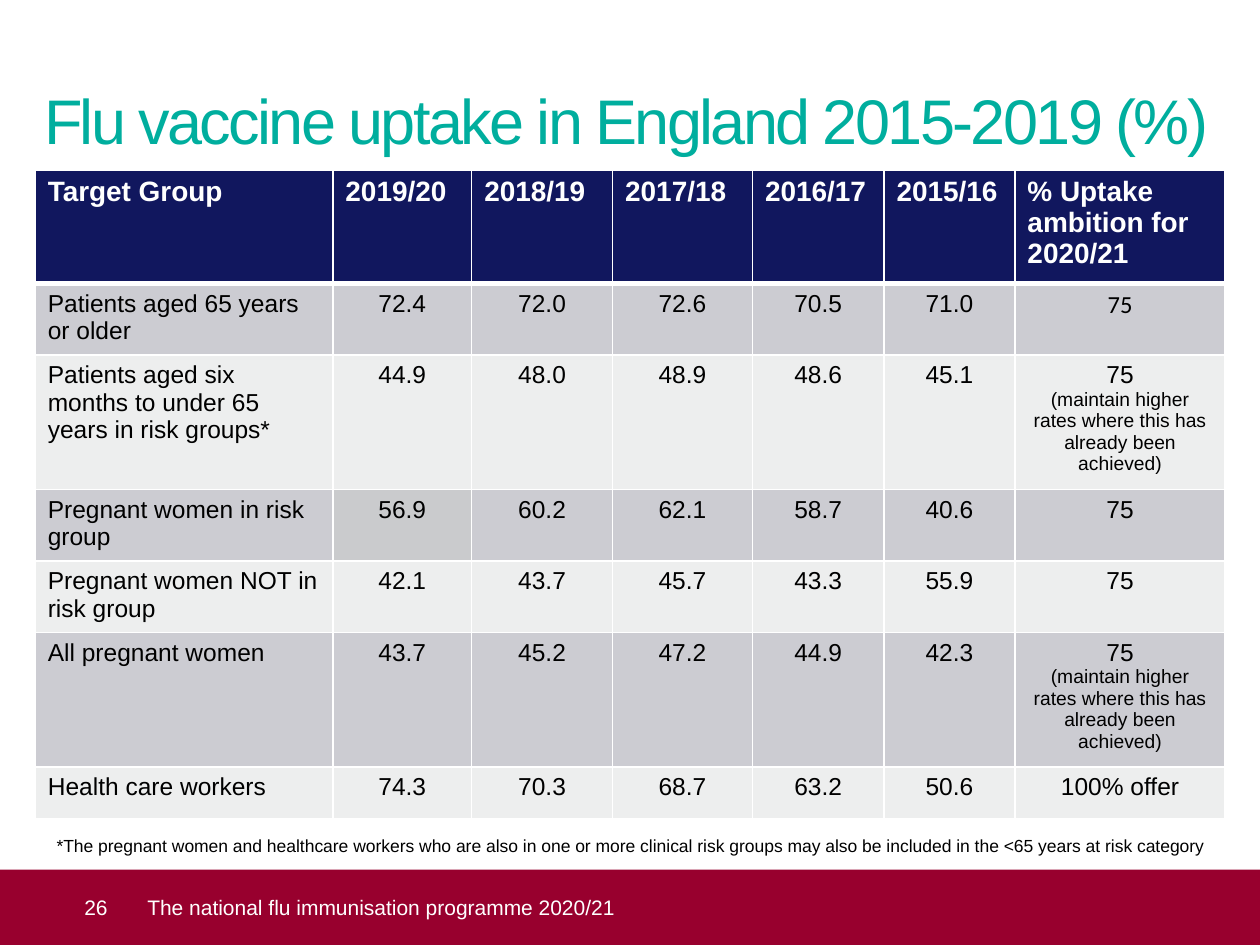
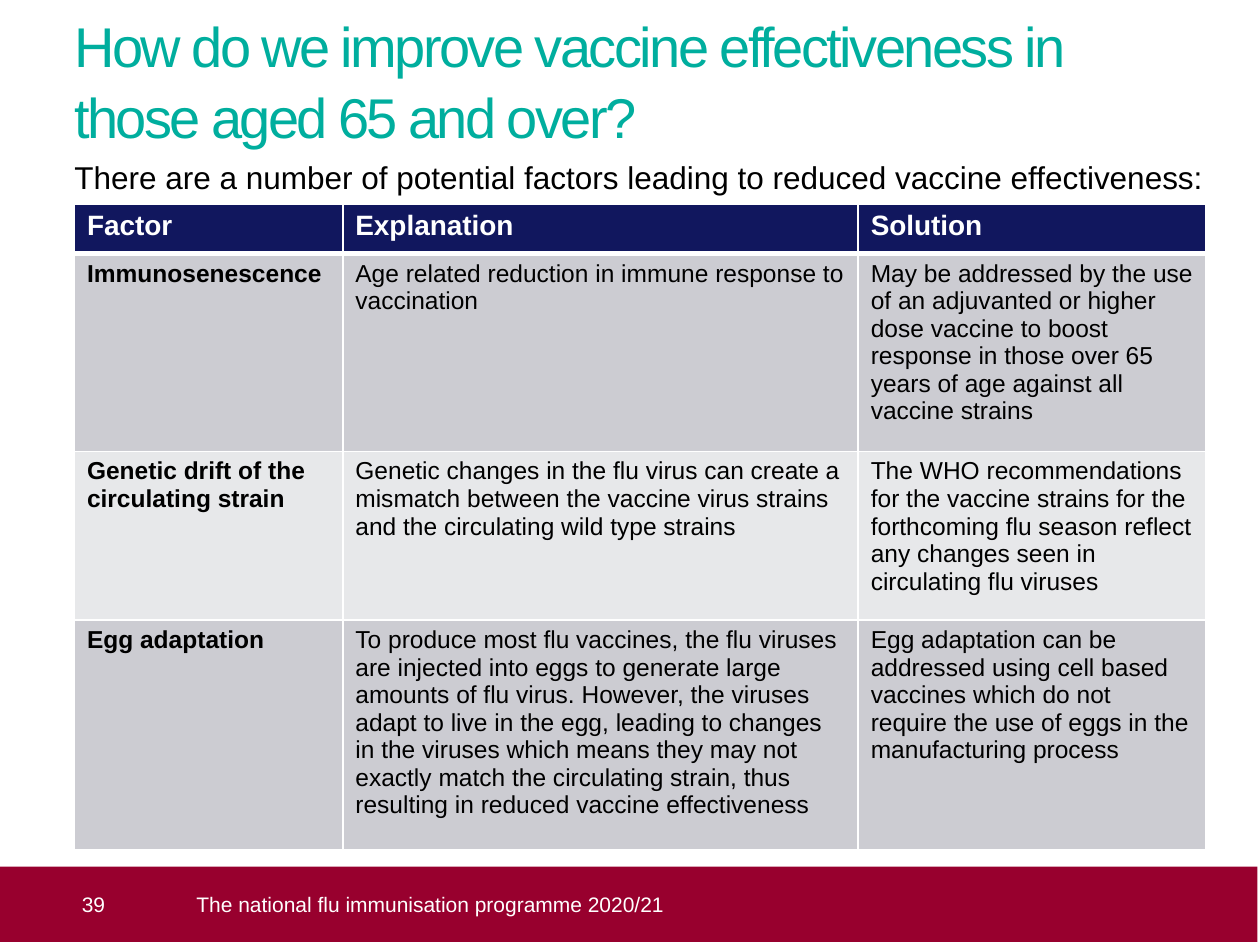
from lxml.etree import SubElement
from pptx import Presentation
from pptx.dml.color import RGBColor
from pptx.enum.shapes import MSO_SHAPE
from pptx.enum.text import MSO_ANCHOR, PP_ALIGN
from pptx.oxml.ns import qn
from pptx.util import Cm, Pt

COLOURS = {
    "teal": "00AE9E",
    "navy": "11175E",
    "crimson": "98002E",
    "grey": "CCCCD2",
    "cool": "CACBCD",
    "pale": "EDEEEE",
    "mist": "E7E8EA",
    "white": "FFFFFF",
    "black": "000000",
}
SLIDE_WIDTH = 25.4
PROGRAMME = "The national flu immunisation programme 2020/21"
FOOTER_FORMAT = {"size": Pt(12), "colour": "white"}
HEADER_FORMAT = {"size": Pt(16), "colour": "white", "bold": True}
CELL_FORMAT = {"size": Pt(14)}
NOTE_FORMAT = {"size": Pt(11)}

MAINTAIN = "75\n(maintain higher rates where this has already been achieved)"
UPTAKE_ROWS = [
    ["Target Group", "2019/20", "2018/19", "2017/18", "2016/17", "2015/16",
     "% Uptake ambition for 2020/21"],
    ["Patients aged 65 years or older",
     "72.4", "72.0", "72.6", "70.5", "71.0", "75"],
    ["Patients aged six months to under 65 years in risk groups*",
     "44.9", "48.0", "48.9", "48.6", "45.1", MAINTAIN],
    ["Pregnant women in risk group",
     "56.9", "60.2", "62.1", "58.7", "40.6", "75"],
    ["Pregnant women NOT in risk group",
     "42.1", "43.7", "45.7", "43.3", "55.9", "75"],
    ["All pregnant women",
     "43.7", "45.2", "47.2", "44.9", "42.3", MAINTAIN],
    ["Health care workers",
     "74.3", "70.3", "68.7", "63.2", "50.6", "100% offer"],
]
FACTOR_ROWS = [
    ["Factor", "Explanation", "Solution"],
    ["Immunosenescence",
     "Age related reduction in immune response to vaccination",
     "May be addressed by the use of an adjuvanted or higher dose vaccine to "
     "boost response in those over 65 years of age against all vaccine strains"],
    ["Genetic drift of the circulating strain",
     "Genetic changes in the flu virus can create a mismatch between the "
     "vaccine virus strains and the circulating wild type strains",
     "The WHO recommendations for the vaccine strains for the forthcoming flu "
     "season reflect any changes seen in circulating flu viruses"],
    ["Egg adaptation",
     "To produce most flu vaccines, the flu viruses are injected into eggs to "
     "generate large amounts of flu virus. However, the viruses adapt to live "
     "in the egg, leading to changes in the viruses which means they may not "
     "exactly match the circulating strain, thus resulting in reduced vaccine "
     "effectiveness",
     "Egg adaptation can be addressed using cell based vaccines which do not "
     "require the use of eggs in the manufacturing process"],
]


def colour_of(name):
    return RGBColor.from_string(COLOURS[name])


def add_span(para, text, colour="black", **values):
    """Add one run; the values are font attributes."""
    span = para.add_run()
    span.text = text
    for name, value in {"name": "Arial", "bold": False, **values}.items():
        setattr(span.font, name, value)
    span.font.color.rgb = colour_of(colour)
    return span


def set_frame(frame, margins, anchor):
    values = dict(zip(
        ("margin_left", "margin_top", "margin_right", "margin_bottom"),
        map(Cm, margins)))
    values.update(word_wrap=True, vertical_anchor=anchor)
    for name, value in values.items():
        setattr(frame, name, value)


def add_text(page, place, text, margins=(0, 0, 0, 0), anchor=MSO_ANCHOR.TOP,
             spacing=None, **values):
    box = page.shapes.add_textbox(*map(Cm, place))
    set_frame(box.text_frame, margins, anchor)
    para = box.text_frame.paragraphs[0]
    para.line_spacing = spacing
    return add_span(para, text, **values)


def add_title(page, place, text, size):
    span = add_text(page, place, text, spacing=1.05, size=Pt(size), colour="teal")
    span.font._element.set("spc", "-150")


def add_footer(page, number, left, top, text_left):
    # Band with the page number
    height = 1.52
    band = page.shapes.add_shape(
        MSO_SHAPE.RECTANGLE, Cm(left), Cm(top), Cm(SLIDE_WIDTH), Cm(height))
    band.shadow.inherit = False
    band.fill.solid()
    band.fill.fore_color.rgb = colour_of("crimson")
    band.line.fill.background()
    set_frame(band.text_frame, (1.7, 0, 0.25, 0), MSO_ANCHOR.MIDDLE)
    para = band.text_frame.paragraphs[0]
    para.alignment = PP_ALIGN.LEFT
    add_span(para, number, **FOOTER_FORMAT)
    # Programme name
    add_text(page, (text_left, top, 20, height), PROGRAMME,
             anchor=MSO_ANCHOR.MIDDLE, **FOOTER_FORMAT)


def set_borders(cell, **widths):
    """Draw white cell borders, with widths in points for each side."""
    properties = cell._tc.get_or_add_tcPr()
    for side in "LRTB":
        width = Pt(widths.get(side, 1))
        line = SubElement(properties, qn(f"a:ln{side}"), w=str(width))
        fill = SubElement(line, qn("a:solidFill"))
        SubElement(fill, qn("a:srgbClr"), val=COLOURS["white"])


def fill_cell(cell, colour):
    cell.fill.solid()
    cell.fill.fore_color.rgb = colour_of(colour)


def add_grid(page, left, top, widths, heights, rows, bands,
             centred=False, bold_labels=False):
    """Add a table with a navy header and rows in alternating colours."""
    frame = page.shapes.add_table(
        len(rows), len(widths), Cm(left), Cm(top),
        Cm(sum(widths)), Cm(sum(heights)))
    table = frame.table
    for column, width in zip(table.columns, widths):
        column.width = Cm(width)
    for line, height in zip(table.rows, heights):
        line.height = Cm(height)
    for row, texts in enumerate(rows):
        for column, text in enumerate(texts):
            cell = table.cell(row, column)
            # The rule under the header belongs to both neighbouring rows
            set_borders(cell, **{0: {"B": 3}, 1: {"T": 3}}.get(row, {}))
            fill_cell(cell, bands[(row - 1) % 2] if row else "navy")
            label = column == 0
            style = CELL_FORMAT | {"bold": label and bold_labels}
            for index, part in enumerate(text.split("\n")):
                frame_text = cell.text_frame
                para = frame_text.add_paragraph() if index else frame_text.paragraphs[0]
                if row and centred and not label:
                    para.alignment = PP_ALIGN.CENTER
                add_span(para, part, **(
                    HEADER_FORMAT if not row else NOTE_FORMAT if index else style))
    return table


def build_uptake(page):
    add_title(page, (0.89, 1.56, 23.6, 1.8),
              "Flu vaccine uptake in England 2015-2019 (%)", 36)
    table = add_grid(
        page, 0.71, 3.43,
        widths=[6, 2.8, 2.84, 2.82, 2.65, 2.64, 4.24],
        heights=[2.1, 1.36, 2.54, 1.36, 1.36, 2.54, 1.04],
        rows=UPTAKE_ROWS, bands=("grey", "pale"), centred=True)
    # Two cells that differ from the rest
    table.cell(1, 6).text_frame.paragraphs[0].runs[0].font.name = "Calibri"
    fill_cell(table.cell(3, 1), "cool")
    add_footer(page, "26", left=0, top=17.53, text_left=2.97)
    add_text(page, (0.89, 16.71, 24, 0.69),
             "*The pregnant women and healthcare workers who are also in one or "
             "more clinical risk groups may also be included in the <65 years "
             "at risk category",
             margins=(0.25, 0.13, 0.25, 0.13), size=Pt(10))


def build_effectiveness(page):
    add_title(page, (1.5, 0.17, 22.3, 2.39),
              "How do we improve vaccine effectiveness in those aged 65 and over?", 32)
    add_text(page, (1.5, 3.12, 23.39, 1),
             "There are a number of potential factors leading to reduced "
             "vaccine effectiveness:", spacing=1.1, size=Pt(18))
    add_footer(page, "39", left=-0.05, top=17.47, text_left=3.96)
    add_grid(page, 1.5, 4.12, widths=[5.41, 10.39, 7.01],
             heights=[0.99, 3.99, 3.4, 4.62],
             rows=FACTOR_ROWS, bands=("grey", "mist"), bold_labels=True)


def main():
    deck = Presentation()
    deck.slide_width, deck.slide_height = Cm(SLIDE_WIDTH), Cm(19.05)
    for build in (build_uptake, build_effectiveness):
        build(deck.slides.add_slide(deck.slide_layouts[6]))
    deck.save("out.pptx")


if __name__ == "__main__":
    main()
